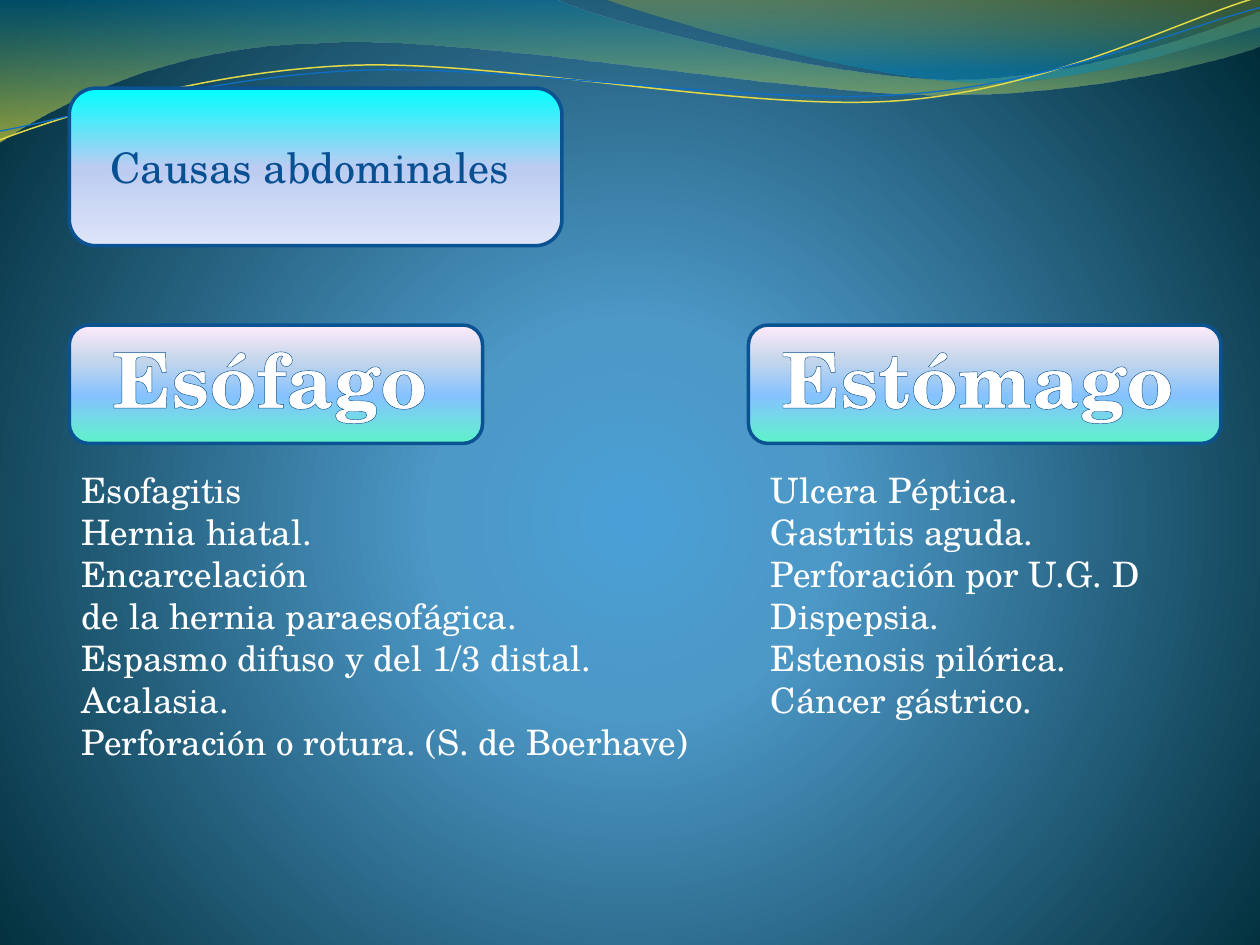
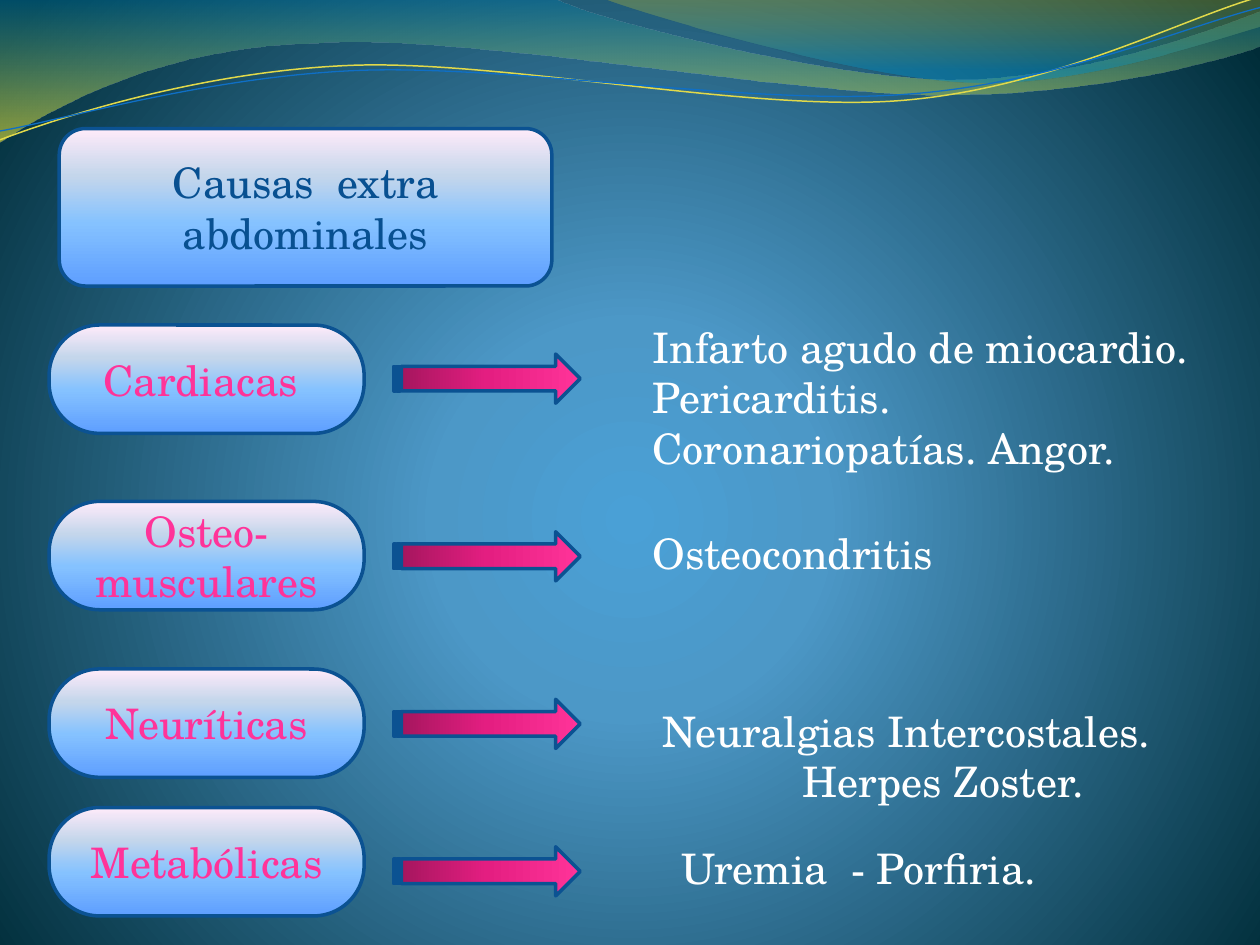
from lxml.etree import SubElement
from pptx import Presentation
from pptx.dml.color import RGBColor as Color
from pptx.enum.shapes import MSO_SHAPE as Preset
from pptx.enum.text import MSO_ANCHOR as Anchor, MSO_AUTO_SIZE as AutoSize, PP_ALIGN as Align
from pptx.oxml import parse_xml
from pptx.oxml.ns import nsdecls, qn
from pptx.util import Inches, Pt

FONT = "TeX Gyre Schola"
COLUMNS, ROWS = 100, 75  # the grid of a 10 x 7.5 inch slide
TITLE_ONLY = 5

COLORS = {
    "white": "FFFFFF", "title": "085091", "pink": "FF3399", "border": "0B5292",
    "yellow line": "E1D94A", "blue line": "0F6FC6",
}

# Gradients: (position, colour, opacity) stops and an angle
SKY = [(40, "85C2FF"), (70, "C4D6EB"), (100, "FFEBFA")]
GRADIENTS = {
    "background": ([(0, "4AA0D6"), (25, "4C98C7"), (100, "002C38")], None),
    "wide wave": ([(0, "0074A1", 45), (100, "FFF435", 55)], 90),
    "right wave": ([(0, "D0C72B", 30), (80, "008BBF", 45)], 90),
    "cyan": ([(0, "00FFFF"), (50, "BBCBF2"), (100, "DEE5F8")], 90),
    "mint": ([(0, "5FF3CA")] + SKY, 270),
    "blue": ([(0, "5E9EFF")] + SKY, 270),
    "magenta": ([(0, "A0155B"), (50, "E41E81"), (100, "FF3399")], 0),
}

# Waves in grid units: one point is a straight step, three points are a curve
WIDE_WAVE = [
    [(0, 0)], [(44, -0.1)], [(47.6, 1.7), (66.4, 6.3), (75.8, 6.3)],
    [(85.3, 6.3), (95.8, 2.6), (100, 0.9)], [(100.1, 3.6)],
    [(98.3, 4.4), (87, 7.6), (74.6, 7.5)], [(62.2, 7.5), (38.2, 2.8), (25.7, 3.4)],
    [(12.9, 3.6), (4.6, 8.3), (-0.1, 11.3)],
]
RIGHT_WAVE = [
    [(47.9, -0.1)], [(50.9, 1.1), (68.2, 6.2), (76.9, 6.5)],
    [(85.6, 6.9), (96.1, 3.2), (100, 2.1)], [(100, 0)],
]
YELLOW_LINE = [
    [(0, 11.1)], [(4.8, 9.3), (15.8, 5.7), (27.7, 5.2)],
    [(39.5, 4.7), (59.3, 8.9), (71.3, 8)], [(83.3, 7.1), (93.8, 1.5), (99.8, -0.2)],
]
BLUE_LINE = [
    [(0, 10.4)], [(4.7, 9.6), (16.4, 6.1), (28.3, 5.6)],
    [(40.3, 5.1), (59.7, 8.4), (71.7, 7.5)], [(83.6, 6.7), (94.1, 2.1), (100, 0.6)],
]


def bend(shape, steps):
    """Turn each three-point step of a freeform into one curve."""
    outline = next(shape.element.iter(qn("a:path")))
    segments = iter(outline.findall(qn("a:lnTo")))
    for step in steps[1:]:
        parts = [next(segments) for _ in step]
        if len(parts) == 3:
            curve = SubElement(outline, qn("a:cubicBezTo"))
            outline.replace(parts[0], curve)
            for part in parts:
                curve.append(part[0])
            for part in parts[1:]:
                outline.remove(part)


def set_gradient(fill, holder, name):
    """Fill a shape or background with a named gradient."""
    stops, angle = GRADIENTS[name]
    stop_xml = ""
    for position, color, *opacity in stops:
        alpha = f'<a:alpha val="{opacity[0] * 1000}"/>' if opacity else ""
        stop_xml += (f'<a:gs pos="{position * 1000}">'
                     f'<a:srgbClr val="{color}">{alpha}</a:srgbClr></a:gs>')
    if angle is None:
        direction = ('<a:path path="circle"><a:fillToRect l="10000" t="110000"'
                     ' r="10000" b="100000"/></a:path>')
    else:
        direction = f'<a:lin ang="{angle * 60000}" scaled="0"/>'
    fill.solid()
    solid = holder.find(qn("a:solidFill"))
    holder.replace(solid, parse_xml(
        f'<a:gradFill {nsdecls("a")} rotWithShape="1"><a:gsLst>{stop_xml}</a:gsLst>'
        f'{direction}</a:gradFill>'))


def write_text(frame, text, size=24, color="white", bold=None, align=Align.LEFT,
               indents=(), outline=None):
    """Write one paragraph for each line of the text."""
    for index, line in enumerate(text.split("\n")):
        paragraph = frame.paragraphs[0] if index == 0 else frame.add_paragraph()
        paragraph.alignment = align
        if index < len(indents) and indents[index]:
            paragraph._p.get_or_add_pPr().set("marL", str(Inches(indents[index])))
        run = paragraph.add_run()
        run.text = line
        run.font.name, run.font.size, run.font.bold = FONT, Pt(size), bold
        run.font.color.rgb = Color.from_string(COLORS[color])
        if outline:
            run._r.get_or_add_rPr().insert(0, parse_xml(
                f'<a:ln {nsdecls("a")} w="{Pt(outline)}"><a:solidFill>'
                f'<a:srgbClr val="{COLORS["border"]}"/></a:solidFill></a:ln>'))


class Deck:
    """Holds the shared style and the current slide."""

    def __init__(self):
        self.presentation = Presentation()
        self.presentation.slide_width = Inches(10)
        self.presentation.slide_height = Inches(7.5)
        self.column = self.presentation.slide_width / COLUMNS
        self.row = self.presentation.slide_height / ROWS
        self.slide = None

    def box(self, left, top, width, height):
        return (round(left * self.column), round(top * self.row),
                round(width * self.column), round(height * self.row))

    def add_slide(self):
        layout = self.presentation.slide_layouts[TITLE_ONLY]
        self.slide = self.presentation.slides.add_slide(layout)

    def style_master(self):
        """Give the master its background and waves."""
        master = self.presentation.slide_master
        fill = master.background.fill
        set_gradient(fill, master.element.cSld.find(qn("p:bg")).find(qn("p:bgPr")),
                     "background")
        waves = [
            self.wave(WIDE_WAVE, gradient="wide wave"),
            self.wave(RIGHT_WAVE, gradient="right wave"),
            self.wave(YELLOW_LINE, color="yellow line", weight=0.85),
            self.wave(BLUE_LINE, color="blue line", weight=0.75),
        ]
        for wave in waves:
            master.shapes.element.append(wave.element)

    def wave(self, steps, gradient=None, color=None, weight=0):
        points = [(round(x * self.column), round(y * self.row))
                  for step in steps for x, y in step]
        builder = self.slide.shapes.build_freeform(*points[0])
        builder.add_line_segments(points[1:], close=gradient is not None)
        shape = builder.convert_to_shape()
        bend(shape, steps)
        shape.shadow.inherit = False
        if gradient:
            set_gradient(shape.fill, shape.element.spPr, gradient)
            shape.line.fill.background()
        else:
            shape.fill.background()
            self.border(shape, color, weight)
        return shape

    def border(self, shape, color="border", weight=2):
        shape.line.color.rgb = Color.from_string(COLORS[color])
        shape.line.width = Pt(weight)

    def title(self, text, left, top, gradient):
        """Lay the title placeholder over a rounded panel."""
        place = (left, top, 39.1, 12.5)
        self.panel(Preset.ROUNDED_RECTANGLE, place, gradient)
        shape = self.slide.shapes.title
        self.slide.shapes.element.append(shape.element)
        shape.left, shape.top, shape.width, shape.height = self.box(*place)
        frame = shape.text_frame
        frame.word_wrap, frame.auto_size = True, AutoSize.NONE
        frame.vertical_anchor = Anchor.MIDDLE
        write_text(frame, text, color="title", align=Align.CENTER)

    def panel(self, preset, place, gradient, text=None, rounding=None):
        shape = self.slide.shapes.add_shape(preset, *self.box(*place))
        shape.shadow.inherit = False
        if rounding:
            shape.adjustments[0] = rounding
        set_gradient(shape.fill, shape.element.spPr, gradient)
        self.border(shape)
        if text:
            shape.text_frame.vertical_anchor = Anchor.MIDDLE
            write_text(shape.text_frame, text, color="pink", align=Align.CENTER)

    def text(self, text, place, **text_format):
        frame = self.slide.shapes.add_textbox(*self.box(*place)).text_frame
        frame.word_wrap, frame.auto_size = False, AutoSize.SHAPE_TO_FIT_TEXT
        write_text(frame, text, **text_format)


def abdominal_causes(deck):
    # Organ, panel left and width, heading left and width, causes and their place
    organs = [
        ("Esófago", 5.5, 32.8, 7.8, 27.3,
         "Esofagitis\nHernia hiatal.\nEncarcelación\nde la hernia paraesofágica.\n"
         "Espasmo difuso y del 1/3 distal.\nAcalasia.\n"
         "Perforación o rotura. (S. de Boerhave)", (5.5, 36.7, 50.9, 24.6)),
        ("Estómago", 59.4, 37.5, 60.9, 33.4,
         "Ulcera Péptica.\nGastritis aguda.\nPerforación por U.G. D\nDispepsia.\n"
         "Estenosis pilórica.\nCáncer gástrico.", (60.2, 36.7, 31.7, 21.2)),
    ]
    for organ, left, width, text_left, text_width, causes, place in organs:
        deck.panel(Preset.ROUNDED_RECTANGLE, (left, 25.8, width, 9.4), "mint")
        deck.text(organ, (text_left, 25.8, text_width, 8.4), size=44, bold=True,
                  align=Align.CENTER, outline=2.48)
        deck.text(causes, place, size=20)
    deck.title("Causas abdominales ", 5.5, 7, "cyan")


def extra_abdominal_causes(deck):
    deck.title("Causas  extra abdominales", 4.7, 10.2, "blue")
    # Group, its top, arrow top, causes, their place and indents
    groups = [
        ("Cardiacas ", 25.8, 28.1,
         "Infarto agudo de miocardio.\nPericarditis.\nCoronariopatías. Angor.",
         (50.8, 25, 44.8, 13.1), ()),
        ("Osteo-\nmusculares", 39.8, 42.2, "Osteocondritis", (50.8, 41.4, 25.4, 8.1), ()),
        ("Neuríticas", 53.1, 55.5, "Neuralgias Intercostales.\nHerpes Zoster.",
         (51.6, 55.5, 41.2, 9.1), (0, 1.11)),
        ("Metabólicas", 64.1, 67.2, "Uremia  - Porfiria.", (53.1, 66.4, 30.7, 5), ()),
    ]
    for group, top, arrow_top, causes, place, indents in groups:
        deck.panel(Preset.ROUNDED_RECTANGLE, (3.9, top, 25, 8.6), "blue", group, 0.467)
        deck.panel(Preset.STRIPED_RIGHT_ARROW, (31.25, arrow_top, 14.8, 3.9), "magenta")
        deck.text(causes, place, indents=indents)


def main():
    deck = Deck()
    deck.add_slide()
    deck.style_master()
    abdominal_causes(deck)
    deck.add_slide()
    extra_abdominal_causes(deck)
    deck.presentation.save("out.pptx")


if __name__ == "__main__":
    main()
